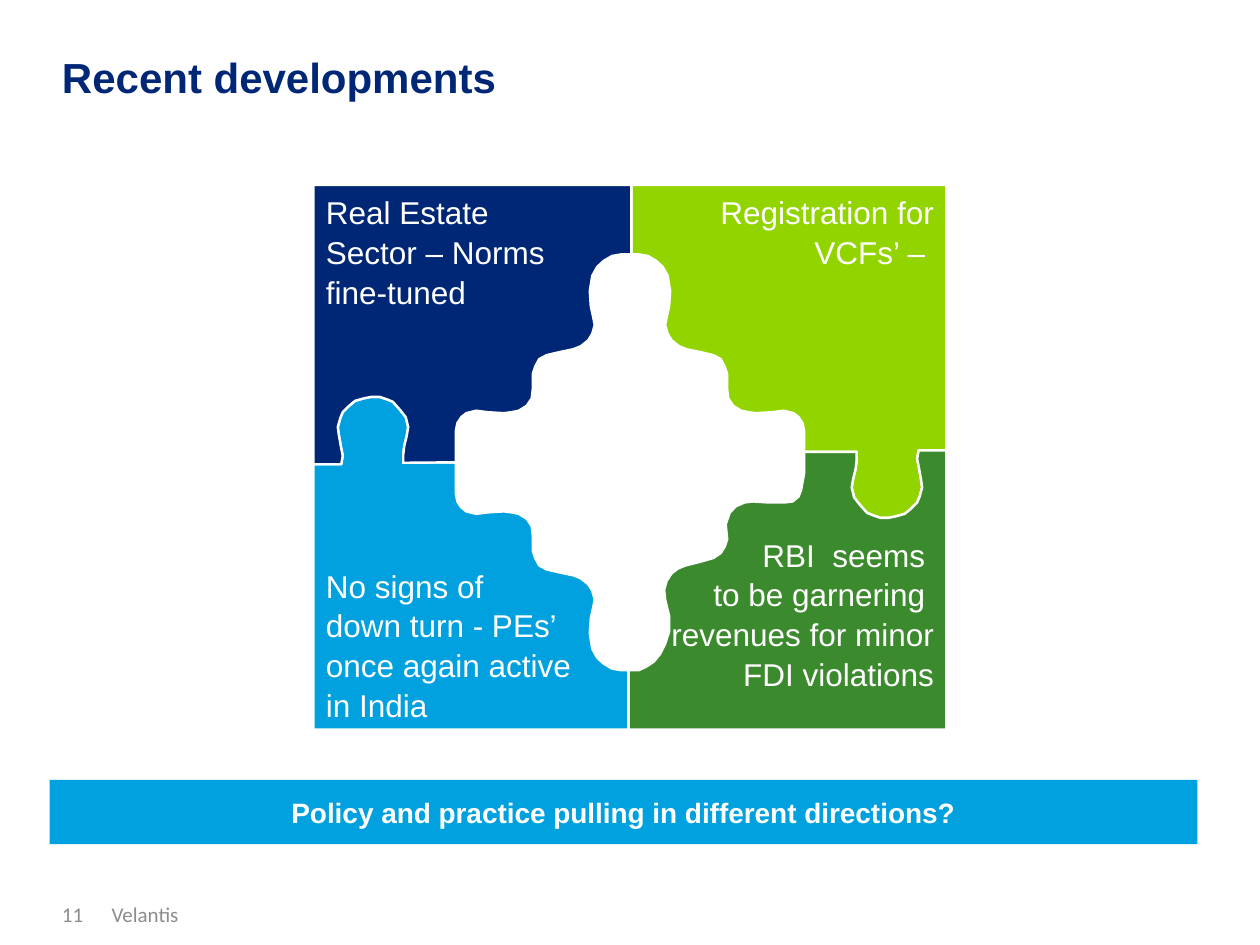
from pptx import Presentation
from pptx.dml.color import RGBColor
from pptx.enum.shapes import MSO_SHAPE as Shape
from pptx.enum.text import MSO_ANCHOR as Anchor, PP_ALIGN as Align
from pptx.util import Cm, Pt

NAVY = RGBColor(0x00, 0x27, 0x76)
LIME = RGBColor(0x92, 0xD4, 0x00)
BLUE = RGBColor(0x00, 0xA1, 0xDE)
GREEN = RGBColor(0x3C, 0x8A, 0x2E)
GREY = RGBColor(0x8C, 0x8C, 0x8C)
WHITE = RGBColor(0xFF, 0xFF, 0xFF)

# Puzzle outlines, in hundredths of a centimetre
LEFT, RIGHT, TOP, BOTTOM = 632, 1908, 373, 1471
RIGHT_TAB = [
    (1908, 908), (1852, 908), (1849, 925), (1852, 940), (1857, 968), (1859, 983),
    (1854, 1001), (1849, 1013), (1836, 1026), (1824, 1036), (1806, 1041),
    (1791, 1044), (1775, 1044), (1760, 1039), (1748, 1034), (1732, 1016),
    (1722, 1003), (1717, 983), (1720, 965), (1725, 945), (1727, 927), (1727, 911),
]
UPPER_RIGHT_HOLE = [
    (1621, 911), (1621, 869), (1618, 853), (1610, 841), (1600, 833), (1580, 828),
    (1557, 831), (1524, 833), (1509, 831), (1494, 828), (1478, 818), (1468, 803),
    (1466, 785), (1466, 754), (1461, 739), (1453, 724), (1438, 716), (1417, 711),
    (1384, 704), (1369, 698), (1354, 686), (1346, 673), (1341, 655), (1344, 640),
    (1349, 617), (1351, 587), (1346, 556), (1336, 538), (1323, 526), (1306, 516),
    (1288, 513), (1273, 513),
]
LOWER_RIGHT_HOLE = [
    (1621, 911), (1621, 955), (1615, 988), (1610, 1001), (1598, 1011), (1582, 1013),
    (1549, 1013), (1519, 1011), (1501, 1013), (1483, 1021), (1471, 1034),
    (1463, 1057), (1466, 1087), (1461, 1102), (1453, 1115), (1438, 1125),
    (1410, 1133), (1382, 1140), (1367, 1146), (1354, 1156), (1344, 1171),
    (1339, 1189), (1341, 1209), (1349, 1242), (1349, 1273), (1341, 1298),
    (1331, 1318), (1318, 1334), (1303, 1344), (1288, 1351), (1267, 1351),
]
# The left half mirrors the right; the left tab points up instead of down
LEFT_TAB = [(2540 - x, 1844 - y) for x, y in RIGHT_TAB]
UPPER_LEFT_HOLE = [(2540 - x, y) for x, y in UPPER_RIGHT_HOLE[1:-1]]
UPPER_LEFT_HOLE = [(919, 932)] + UPPER_LEFT_HOLE + [(1273, 513)]
LOWER_LEFT_HOLE = [(2540 - x, 1864 - y) for x, y in UPPER_RIGHT_HOLE[1:]]
LOWER_LEFT_HOLE = [(919, 932)] + LOWER_LEFT_HOLE


def write_text(shape, lines, size=18, color=WHITE, font="Arial", bold=False,
               align=Align.LEFT, anchor=Anchor.TOP, spacing=1.0, inset=0.13):
    """Put one paragraph per line in the shape; inset is the top margin in cm."""
    frame = shape.text_frame
    frame.word_wrap = True
    frame.vertical_anchor = anchor
    frame.margin_top = Cm(inset)
    for index, line in enumerate(lines):
        paragraph = frame.add_paragraph() if index else frame.paragraphs[0]
        paragraph.alignment = align
        paragraph.line_spacing = spacing
        run = paragraph.add_run()
        run.text = line
        run.font.name = font
        run.font.size = Pt(size)
        run.font.bold = bold
        run.font.color.rgb = color


presentation = Presentation()
presentation.slide_width = Cm(25.4)
presentation.slide_height = Cm(19.05)
slide = presentation.slides.add_slide(presentation.slide_layouts[6])

pieces = [
    (LIME, RIGHT_TAB + UPPER_RIGHT_HOLE, RIGHT, TOP,
     ["Registration for VCFs’ – "],
     {"align": Align.RIGHT}),
    (GREEN, RIGHT_TAB + LOWER_RIGHT_HOLE, RIGHT, BOTTOM,
     ["RBI  seems ", "to be garnering ", "revenues for minor FDI violations"],
     {"align": Align.RIGHT, "inset": 1.68}),
    (BLUE, LEFT_TAB + LOWER_LEFT_HOLE, LEFT, BOTTOM,
     ["No signs of", "down turn - PEs’ once again active", "in India"],
     {"anchor": Anchor.BOTTOM}),
    (NAVY, LEFT_TAB + UPPER_LEFT_HOLE, LEFT, TOP,
     ["Real Estate", "Sector – Norms", "fine-tuned"], {}),
]
for color, edge, side, end, lines, text_format in pieces:
    builder = slide.shapes.build_freeform(*edge[0], scale=Cm(0.01))
    builder.add_line_segments(edge[1:] + [(edge[-1][0], end), (side, end)])
    piece = builder.convert_to_shape()
    piece.shadow.inherit = False
    piece.fill.solid()
    piece.fill.fore_color.rgb = color
    piece.line.color.rgb = WHITE
    piece.line.width = Pt(1.38)
    write_text(piece, lines, spacing=1.05, **text_format)

title = slide.shapes.add_textbox(Cm(1), Cm(0.66), Cm(16), Cm(1.75))
write_text(title, ["Recent developments"], size=24, color=NAVY, bold=True,
           anchor=Anchor.MIDDLE)

banner = slide.shapes.add_shape(Shape.RECTANGLE, Cm(1), Cm(15.72), Cm(23.14), Cm(1.3))
banner.shadow.inherit = False
banner.fill.solid()
banner.fill.fore_color.rgb = BLUE
banner.line.fill.background()
write_text(banner, ["Policy and practice pulling in different directions?"],
           size=16, bold=True, align=Align.CENTER, anchor=Anchor.MIDDLE)

for left, width, label in [(1, 1, "11"), (2, 15, "Velantis")]:
    footer = slide.shapes.add_textbox(Cm(left), Cm(18.26), Cm(width), Cm(0.33))
    write_text(footer, [label], size=12, color=GREY, font="Calibri",
               anchor=Anchor.MIDDLE)

presentation.save("out.pptx")
